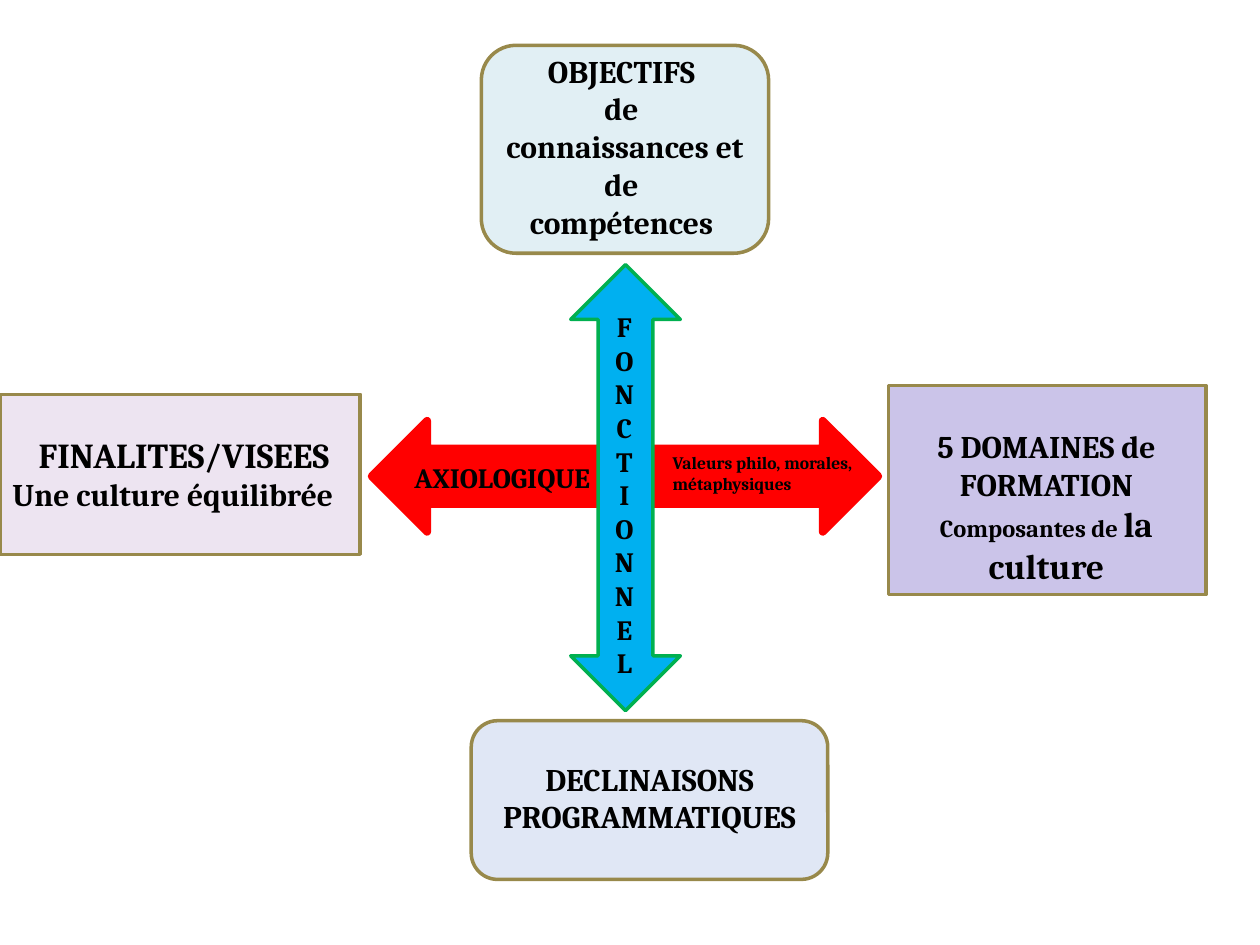
"""Build a slide crossing a functional axis with an axiological axis."""
from pptx import Presentation
from pptx.dml.color import RGBColor
from pptx.enum.shapes import MSO_SHAPE
from pptx.enum.text import MSO_AUTO_SIZE, PP_ALIGN
from pptx.util import Inches, Pt

RECT = MSO_SHAPE.RECTANGLE
ROUND = MSO_SHAPE.ROUNDED_RECTANGLE
HORIZONTAL = MSO_SHAPE.LEFT_RIGHT_ARROW
VERTICAL = MSO_SHAPE.UP_DOWN_ARROW
GROW = MSO_AUTO_SIZE.SHAPE_TO_FIT_TEXT
LEFT, CENTER = PP_ALIGN.LEFT, PP_ALIGN.CENTER

FONT = "Cambria"
BLACK = RGBColor(0x00, 0x00, 0x00)
PINK = RGBColor(0xED, 0xE4, 0xF1)
PURPLE = RGBColor(0xCB, 0xC4, 0xE9)
AQUA = RGBColor(0xE1, 0xEF, 0xF4)
PALE_BLUE = RGBColor(0xE0, 0xE7, 0xF5)
OLIVE = RGBColor(0x98, 0x89, 0x4B)
RED = RGBColor(0xFF, 0x00, 0x00)
SKY = RGBColor(0x00, 0xB0, 0xF0)
GREEN = RGBColor(0x00, 0xB0, 0x50)

prs = Presentation()
prs.slide_width, prs.slide_height = Inches(10), Inches(7.5)
s = prs.slides.add_slide(prs.slide_layouts[6])

shapes = [
    (RECT, (0, 3.13, 2.86, 1.27), PINK, OLIVE, 2),
    (RECT, (7.05, 3.06, 2.52, 1.66), PURPLE, OLIVE, 2),
    (HORIZONTAL, (2.95, 3.34, 4.02, 0.88), RED, RED, 4.5),
    (ROUND, (3.82, 0.36, 2.28, 1.65), AQUA, OLIVE, 2),
    (ROUND, (3.74, 5.72, 2.83, 1.26), PALE_BLUE, OLIVE, 2),
    (VERTICAL, (4.53, 2.1, 0.87, 3.54), SKY, GREEN, 2),
]
for kind, box, fill, line, width in shapes:
    sp = s.shapes.add_shape(kind, *map(Inches, box))
    sp.shadow.inherit = False
    sp.fill.solid()
    sp.fill.fore_color.rgb = fill
    sp.line.color.rgb = line
    sp.line.width = Pt(width)

objectives = ["OBJECTIFS ", "de ", "connaissances et de ", "compétences "]
letters = [*"FONCTION", "NEL"]
texts = [
    ((0, 3.39, 2.92, 0.74), [
        (CENTER, [("FINALITES/VISEES", 20)]),
        (LEFT, [("Une culture équilibrée", 18)])]),
    ((7.13, 3.34, 2.35, 1.38), [
        (CENTER, [("5 DOMAINES de FORMATION", 18)]),
        (CENTER, [("Composantes de ", 14), ("la culture", 20)])]),
    ((3.82, 0.36, 2.28, 1.31), [(CENTER, [(t, 18)]) for t in objectives]),
    ((3.74, 5.98, 2.83, 0.71), [(CENTER, [("DECLINAISONS PROGRAMMATIQUES", 18)])]),
    ((3.19, 3.61, 3.39, 0.37), [(LEFT, [("AXIOLOGIQUE", 16)])]),
    ((4.76, 2.41, 0.39, 3.06), [(CENTER, [(t, 16)]) for t in letters]),
    ((5.24, 3.54, 1.73, 0.44), [
        (LEFT, [("Valeurs philo, morales, métaphysiques", 10)])]),
]
for box, paragraphs in texts:
    tf = s.shapes.add_textbox(*map(Inches, box)).text_frame
    tf.word_wrap = True
    tf.auto_size = GROW
    for i, (align, runs) in enumerate(paragraphs):
        p = tf.add_paragraph() if i else tf.paragraphs[0]
        p.alignment = align
        for text, size in runs:
            r = p.add_run()
            r.text = text
            r.font.name = FONT
            r.font.size = Pt(size)
            r.font.bold = True
            r.font.color.rgb = BLACK

prs.save("out.pptx")
